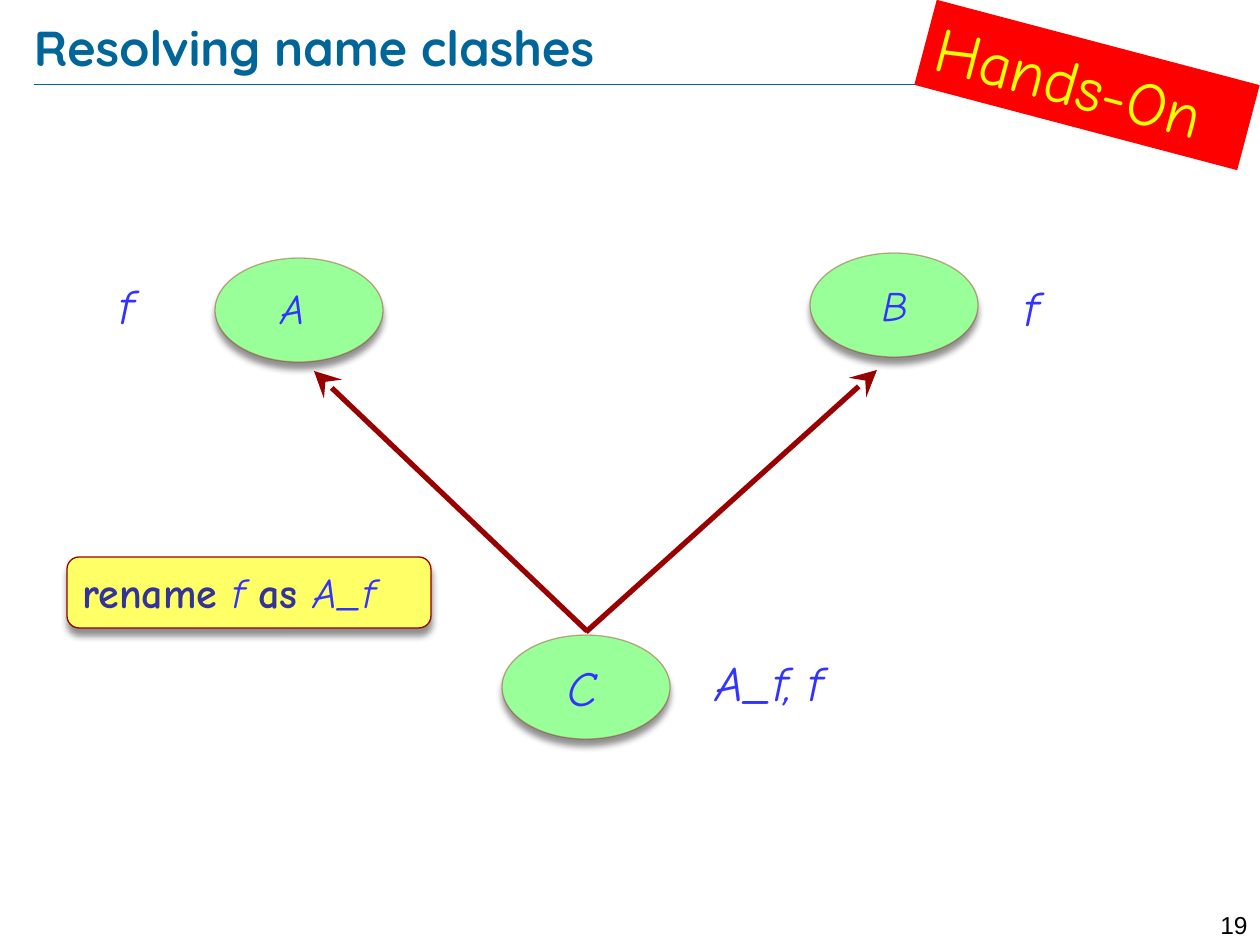
from lxml import etree
from pptx import Presentation
from pptx import util as u
from pptx.dml.color import RGBColor
from pptx.enum import shapes, text
from pptx.oxml import ns

TEAL = RGBColor(0x00, 0x66, 0x99)
BLUE = RGBColor(0x33, 0x33, 0xFF)
NAVY = RGBColor(0x33, 0x33, 0x99)
MAROON = RGBColor(0x99, 0x00, 0x00)
GREEN = RGBColor(0x99, 0xFF, 0x99)
PALE_YELLOW = RGBColor(0xFF, 0xFF, 0x66)
YELLOW = RGBColor(0xFF, 0xFF, 0x00)
RED = RGBColor(0xFF, 0x00, 0x00)
BLACK = RGBColor(0x00, 0x00, 0x00)

PX = u.Inches(1) / 126
LEFT, CENTER, RIGHT = text.PP_ALIGN.LEFT, text.PP_ALIGN.CENTER, text.PP_ALIGN.RIGHT
OVAL = shapes.MSO_SHAPE.OVAL
ROUNDED = shapes.MSO_SHAPE.ROUNDED_RECTANGLE
RECTANGLE = shapes.MSO_SHAPE.RECTANGLE

HAND = {"name": "Comic Neue", "color": BLUE, "italic": True}
CODE_28 = {**HAND, "size": 28}
CODE_24 = {**HAND, "size": 24}
WORD_24 = {"name": "Comic Neue", "size": 24, "color": NAVY, "bold": True}
TITLE = {"name": "Quicksand", "size": 28, "color": TEAL, "bold": True}
NUMBER = {"name": "Arial", "size": 14, "color": BLACK}
BADGE = {"name": "Comic Neue", "size": 36, "color": YELLOW}

RULES = [((34, 84), (1027, 84), 0.25), ((34, 84), (165, 84), 0.5)]
CLASS_SIZE = (168, 104)
CLASSES = [(502, 635), (810, 253), (215, 258)]
INHERITANCE = [((586, 632), (877, 370)), ((587, 631), (314, 371))]
RENAME = [("rename ", WORD_24), ("f ", CODE_24), ("as ", WORD_24), ("A_f", CODE_24)]
LABELS = [
    ((426, 651, 314, 72), "C", CODE_28, {"alignment": CENTER}),
    ((268, 276, 217, 63), "A", CODE_24, {}),
    ((781, 273, 228, 63), "B", CODE_24, {"alignment": CENTER}),
    ((1012, 297, 160, 43), "f", CODE_28, {"line_spacing": 0.5}),
    ((107, 295, 160, 43), "f", CODE_28, {"line_spacing": 0.5}),
    ((703, 672, 243, 43), "A_f, f", CODE_28, {"line_spacing": 0.5}),
    ((1191, 904, 69, 30), "19", NUMBER, {"alignment": RIGHT}),
]

presentation = Presentation()
presentation.slide_width, presentation.slide_height = u.Inches(10), u.Inches(7.5)
slide = presentation.slides.add_slide(presentation.slide_layouts[6])


def px(values):
    return [round(value * PX) for value in values]


def add_element(parent, tag, **attributes):
    return etree.SubElement(parent, ns.qn(tag), attributes)


def write(shape, runs, paragraph_format=None, **frame_format):
    frame = shape.text_frame
    for key, value in {"word_wrap": True, "vertical_anchor": text.MSO_ANCHOR.TOP, **frame_format}.items():
        setattr(frame, key, value)
    paragraph = frame.paragraphs[0]
    for key, value in {"alignment": LEFT, **(paragraph_format or {})}.items():
        setattr(paragraph, key, value)
    for words, style in runs:
        run = paragraph.add_run()
        run.text = words
        for key, value in style.items():
            if key == "color":
                run.font.color.rgb = value
            else:
                setattr(run.font, key, u.Pt(value) if key == "size" else value)


def add_label(box, words, style, paragraph_format=None, **frame_format):
    write(slide.shapes.add_textbox(*px(box)), [(words, style)], paragraph_format, **frame_format)


def add_shape(kind, box, fill, line=None, line_alpha=None):
    shape = slide.shapes.add_shape(kind, *px(box))
    shape.shadow.inherit = False
    shape.fill.solid()
    shape.fill.fore_color.rgb = fill
    if line is None:
        shape.line.fill.background()
        return shape
    shape.line.color.rgb = line
    shape.line.width = u.Pt(0.75)
    if line_alpha:
        color = shape.line._get_or_add_ln().find(".//" + ns.qn("a:srgbClr"))
        add_element(color, "a:alpha", val=str(line_alpha * 1000))
    effects = shape._element.spPr.find(ns.qn("a:effectLst"))
    shadow = add_element(effects, "a:outerShdw", blurRad=str(u.Pt(4)), dist=str(u.Pt(4)),
                         dir="5400000", algn="ctr", rotWithShape="0")
    color = add_element(shadow, "a:srgbClr", val="000000")
    add_element(color, "a:alpha", val="43000")
    return shape


def add_line(start, end, color, width, arrow=False):
    line = slide.shapes.add_connector(shapes.MSO_CONNECTOR.STRAIGHT, *px(start + end))
    line.line.color.rgb = color
    line.line.width = u.Pt(width)
    if arrow:
        add_element(line.line._get_or_add_ln(), "a:tailEnd", type="stealth", w="lg", len="lg")
    add_element(line._element.spPr, "a:effectLst")


for start, end, width in RULES:
    add_line(start, end, TEAL, width)
add_label((34, 16, 1095, 61), "Resolving name clashes", TITLE,
          vertical_anchor=text.MSO_ANCHOR.MIDDLE,
          margin_left=0, margin_right=0, margin_top=0, margin_bottom=0)

rename_box = add_shape(ROUNDED, (67, 557, 364, 71), PALE_YELLOW, MAROON)
rename_box.adjustments[0] = 0.17
write(rename_box, RENAME)

for position in CLASSES:
    add_shape(OVAL, position + CLASS_SIZE, GREEN, MAROON, 34)
for start, end in INHERITANCE:
    add_line(start, end, MAROON, 3, arrow=True)
for label in LABELS:
    add_label(*label)

badge = add_shape(RECTANGLE, (920, 41, 334, 88), RED)
badge.rotation = 14.8
write(badge, [("Hands-On", BADGE)])

presentation.save("out.pptx")
